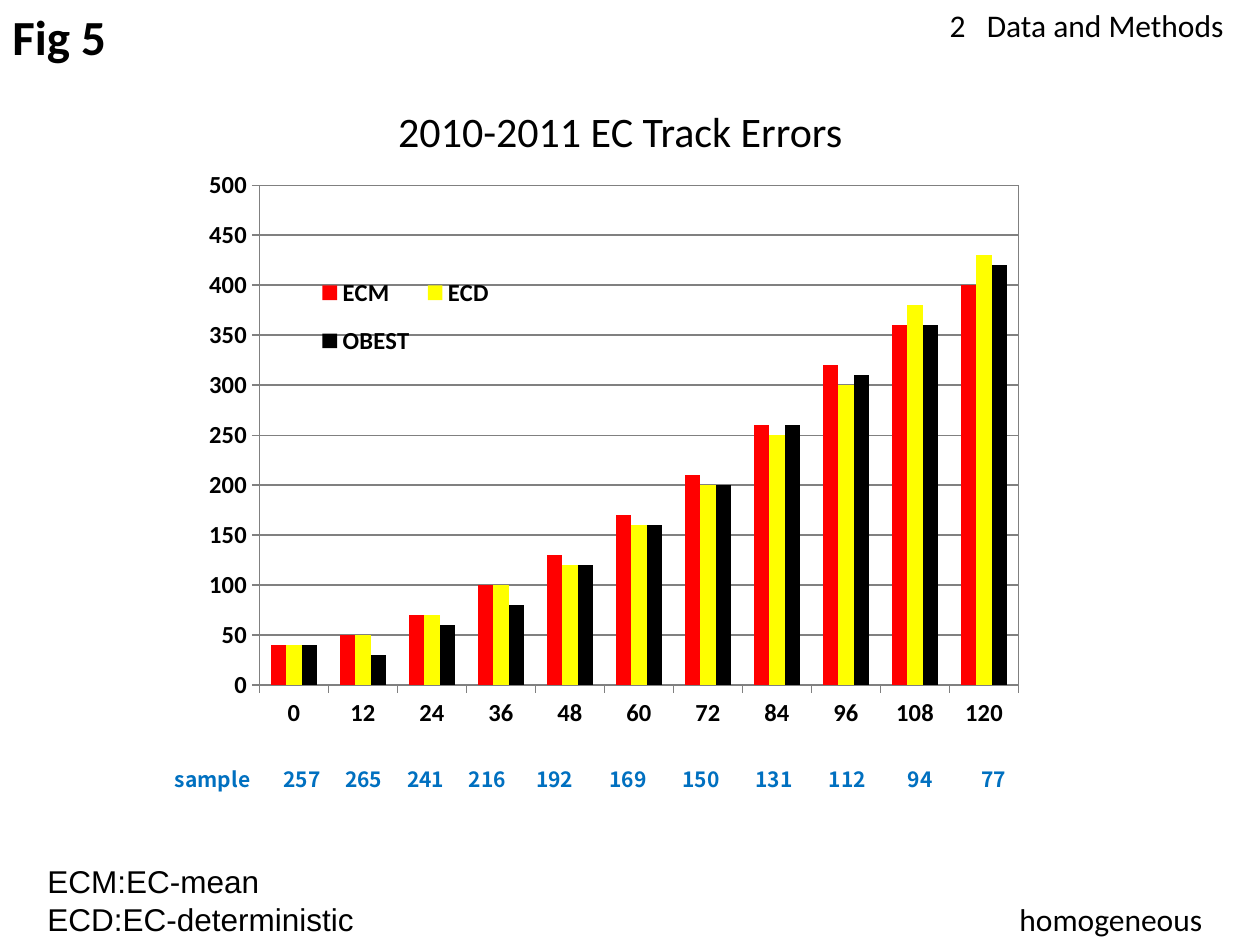
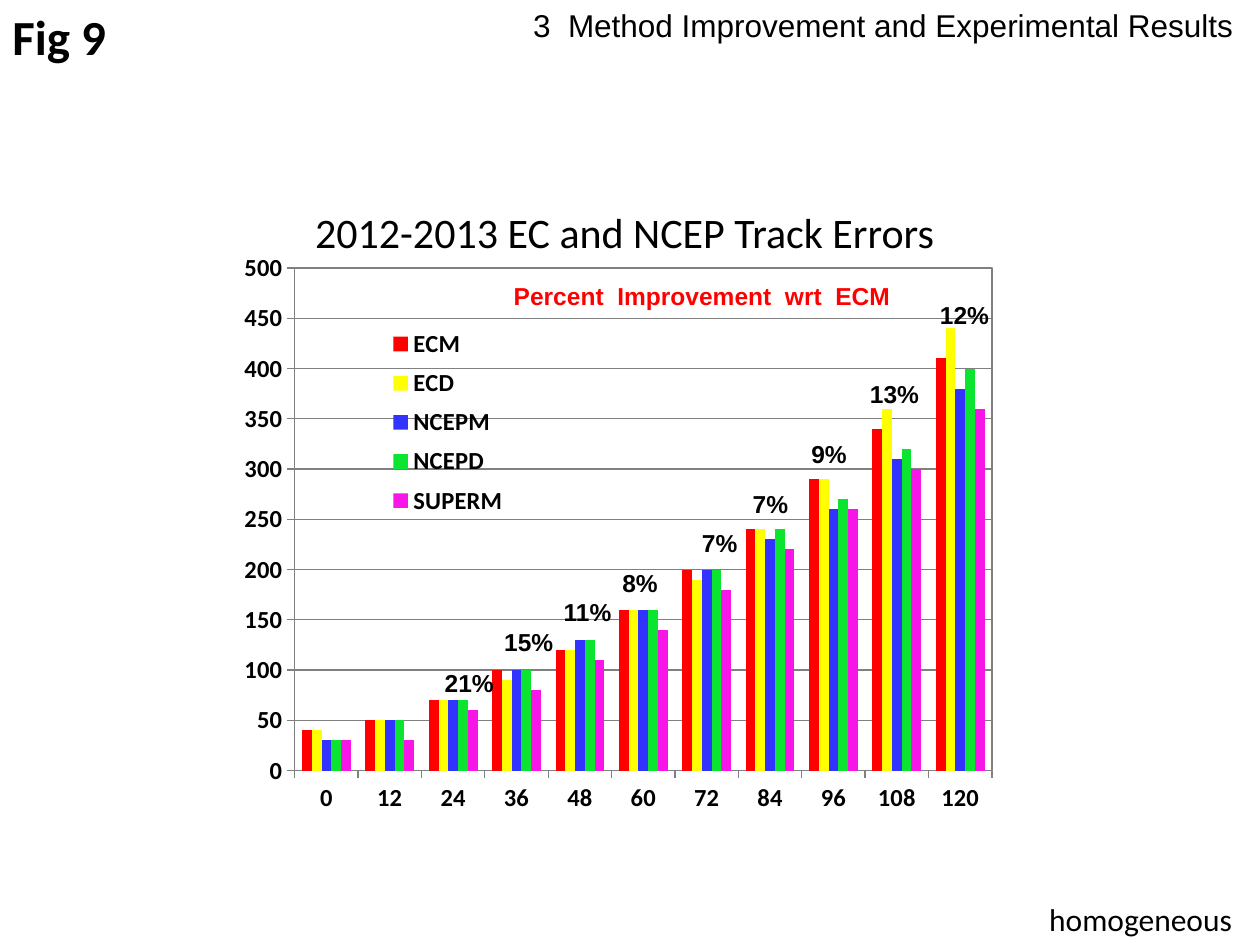
from lxml import etree
from pptx import Presentation
from pptx.chart.data import CategoryChartData as ChartData
from pptx.dml.color import RGBColor as RGB
from pptx.enum.chart import XL_CHART_TYPE as Kind, XL_LEGEND_POSITION as Side, XL_TICK_MARK as Tick
from pptx.enum.text import MSO_ANCHOR as Anchor, PP_ALIGN as Align
from pptx.oxml import parse_xml
from pptx.oxml.ns import nsdecls, qn
from pptx.util import Pt

BLACK = RGB(0x00, 0x00, 0x00)
RED = RGB(0xFF, 0x00, 0x00)
YELLOW = RGB(0xFF, 0xFF, 0x00)
BLUE = RGB(0x33, 0x33, 0xFF)
GREEN = RGB(0x0B, 0xE5, 0x2F)
PINK = RGB(0xF7, 0x15, 0xE7)
AZURE = RGB(0x00, 0x70, 0xC0)
GREY = RGB(0x80, 0x80, 0x80)

SANS = "Calibri"
ARIAL = "Arial"
CJK = "Noto Sans CJK SC"
HOURS = [str(hour) for hour in range(0, 121, 12)]

EC_ROWS = [
    ("ECM", RED, (40, 50, 70, 100, 130, 170, 210, 260, 320, 360, 400)),
    ("ECD", YELLOW, (40, 50, 70, 100, 120, 160, 200, 250, 300, 380, 430)),
    ("OBEST", BLACK, (40, 30, 60, 80, 120, 160, 200, 260, 310, 360, 420)),
]
ALL_ROWS = [
    ("ECM", RED, (40, 50, 70, 100, 120, 160, 200, 240, 290, 340, 410)),
    ("ECD", YELLOW, (40, 50, 70, 90, 120, 160, 190, 240, 290, 360, 440)),
    ("NCEPM", BLUE, (30, 50, 70, 100, 130, 160, 200, 230, 260, 310, 380)),
    ("NCEPD", GREEN, (30, 50, 70, 100, 130, 160, 200, 240, 270, 320, 400)),
    ("SUPERM", PINK, (30, 30, 60, 80, 110, 140, 180, 220, 260, 300, 360)),
]
SAMPLE = ["sample", 257, 265, 241, 216, 192, 169, 150, 131, 112, 94, 77]
WIDTHS = [67] + [35.3] * 4 + [41.8] * 7
GAINS = [
    ("21%", 247, 378), ("15%", 281, 355), ("11%", 315, 337.5),
    ("8%", 348.5, 321), ("7%", 394, 298), ("7%", 423, 276),
    ("9%", 456.5, 247.5), ("13%", 490, 213), ("12%", 530, 168),
]


def style(font, size, face=SANS, color=BLACK, bold=False):
    """Set the look of a font."""
    font.size, font.name, font.bold = Pt(size), face, bold
    font.color.rgb = color


def fill_text(frame, text, size=18, align=Align.LEFT, **look):
    """Write each line of text as a formatted paragraph."""
    for i, line in enumerate(text.split("\n")):
        para = frame.add_paragraph() if i else frame.paragraphs[0]
        para.alignment = align
        run = para.add_run()
        run.text = line
        style(run.font, size, **look)


def add_text(slide, text, box, anchor=Anchor.TOP, wrap=True, **look):
    """Place a text box."""
    frame = slide.shapes.add_textbox(*map(Pt, box)).text_frame
    frame.word_wrap = wrap
    frame.vertical_anchor = anchor
    fill_text(frame, text, **look)


def add_frame(slide, figure, topic, left, face=SANS):
    """Add the figure label and the section heading."""
    add_text(slide, figure, (0, 0, 85, 41), size=28, bold=True)
    add_text(slide, topic, (left, 0, 720 - left, 29), face=face)


def set_layout(part, index, area, inner=False):
    """Fix the area of a chart part, as fractions of the chart."""
    for old in part.findall(qn("c:layout")):
        part.remove(old)
    layout = parse_xml(f"<c:layout {nsdecls('c')}><c:manualLayout/></c:layout>")
    pairs = [("layoutTarget", "inner")] if inner else []
    pairs += [("xMode", "edge"), ("yMode", "edge"), *zip("xywh", area)]
    for tag, value in pairs:
        etree.SubElement(layout[0], qn(f"c:{tag}")).set("val", str(value))
    part.insert(index, layout)


def add_bars(slide, rows, box, plot_area, key_area):
    """Draw the clustered columns of track errors."""
    data = ChartData()
    data.categories = HOURS
    for name, _, values in rows:
        data.add_series(name, values)
    chart = slide.shapes.add_chart(Kind.COLUMN_CLUSTERED, *map(Pt, box), data).chart
    chart.has_title = False
    style(chart.font, 14, bold=True)
    plot = chart.plots[0]
    plot.gap_width, plot.overlap, plot.vary_by_categories = 150, 0, False
    for bars, (_, color, _) in zip(plot.series, rows):
        bars.format.fill.solid()
        bars.format.fill.fore_color.rgb = color
    scale = chart.value_axis
    scale.minimum_scale, scale.maximum_scale, scale.major_unit = 0, 500, 50
    scale.has_major_gridlines = True
    for axis in (scale, chart.category_axis):
        axis.major_tick_mark = Tick.OUTSIDE
    for item in (scale, chart.category_axis, scale.major_gridlines):
        item.format.line.color.rgb = GREY
        item.format.line.width = Pt(0.75)
    chart.has_legend = True
    chart.legend.position = Side.RIGHT
    chart.legend.include_in_layout = False
    root = chart.element.chart
    set_layout(root.find(qn("c:legend")), 1, key_area)
    area = root.plotArea
    set_layout(area, 0, plot_area, inner=True)
    area.append(parse_xml(
        f'<c:spPr {nsdecls("c", "a")}><a:noFill/><a:ln w="9525"><a:solidFill>'
        f'<a:srgbClr val="{GREY}"/></a:solidFill></a:ln></c:spPr>'))


def add_counts(slide):
    """Add the row of sample sizes."""
    box = map(Pt, (88, 417.5, sum(WIDTHS), 54))
    table = slide.shapes.add_table(1, len(SAMPLE), *box).table
    table.first_row = table.horz_banding = False
    for i, (value, width) in enumerate(zip(SAMPLE, WIDTHS)):
        table.columns[i].width = Pt(width)
        cell = table.cell(0, i)
        cell.fill.background()
        cell.margin_left = cell.margin_right = 0
        cell.margin_top = cell.margin_bottom = 0
        cell.vertical_anchor = Anchor.MIDDLE
        fill_text(cell.text_frame, str(value), size=12, face=CJK,
                  color=AZURE, bold=True, align=Align.CENTER)


def draw_ec(slide):
    """Build the slide on the EC errors."""
    add_text(slide, "homogeneous", (575.5, 511, 124.5, 29), wrap=False)
    add_counts(slide)
    add_text(slide, "2010-2011 EC Track Errors", (150.5, 43, 408, 63),
             size=24, anchor=Anchor.MIDDLE, align=Align.CENTER)
    add_bars(slide, EC_ROWS, (88, 83, 533, 363),
             (0.113, 0.063, 0.814, 0.787), (0.17, 0.18, 0.2, 0.18))
    add_frame(slide, "Fig 5", "2   Data and Methods", 535.5)
    add_text(slide, "ECM:EC-mean\nECD:EC-deterministic", (20, 489, 204, 51), face=ARIAL)


def draw_all(slide):
    """Build the slide on the EC and NCEP errors."""
    add_text(slide, "homogeneous", (592.5, 511, 153, 29))
    add_bars(slide, ALL_ROWS, (127.5, 139.5, 476, 334),
             (0.086, 0.041, 0.837, 0.86), (0.19, 0.13, 0.16, 0.35))
    add_text(slide, "2012-2013 EC and NCEP Track Errors", (173, 100, 413, 65),
             size=24, anchor=Anchor.MIDDLE)
    add_frame(slide, "Fig 9", "3  Method Improvement and Experimental Results",
              297.5, face=ARIAL)
    for gain, left, top in GAINS:
        add_text(slide, gain, (left, top, 62.5, 24.5), size=14, face=ARIAL, bold=True)
    add_text(slide, "Percent  Improvement  wrt  ECM", (286.5, 157, 233, 24.5),
             wrap=False, size=14, face=ARIAL, color=RED, bold=True)


def main():
    """Build and save the deck."""
    deck = Presentation()
    deck.slide_width, deck.slide_height = Pt(720), Pt(540)
    for draw in (draw_ec, draw_all):
        draw(deck.slides.add_slide(deck.slide_layouts[6]))
    deck.save("out.pptx")


if __name__ == "__main__":
    main()
